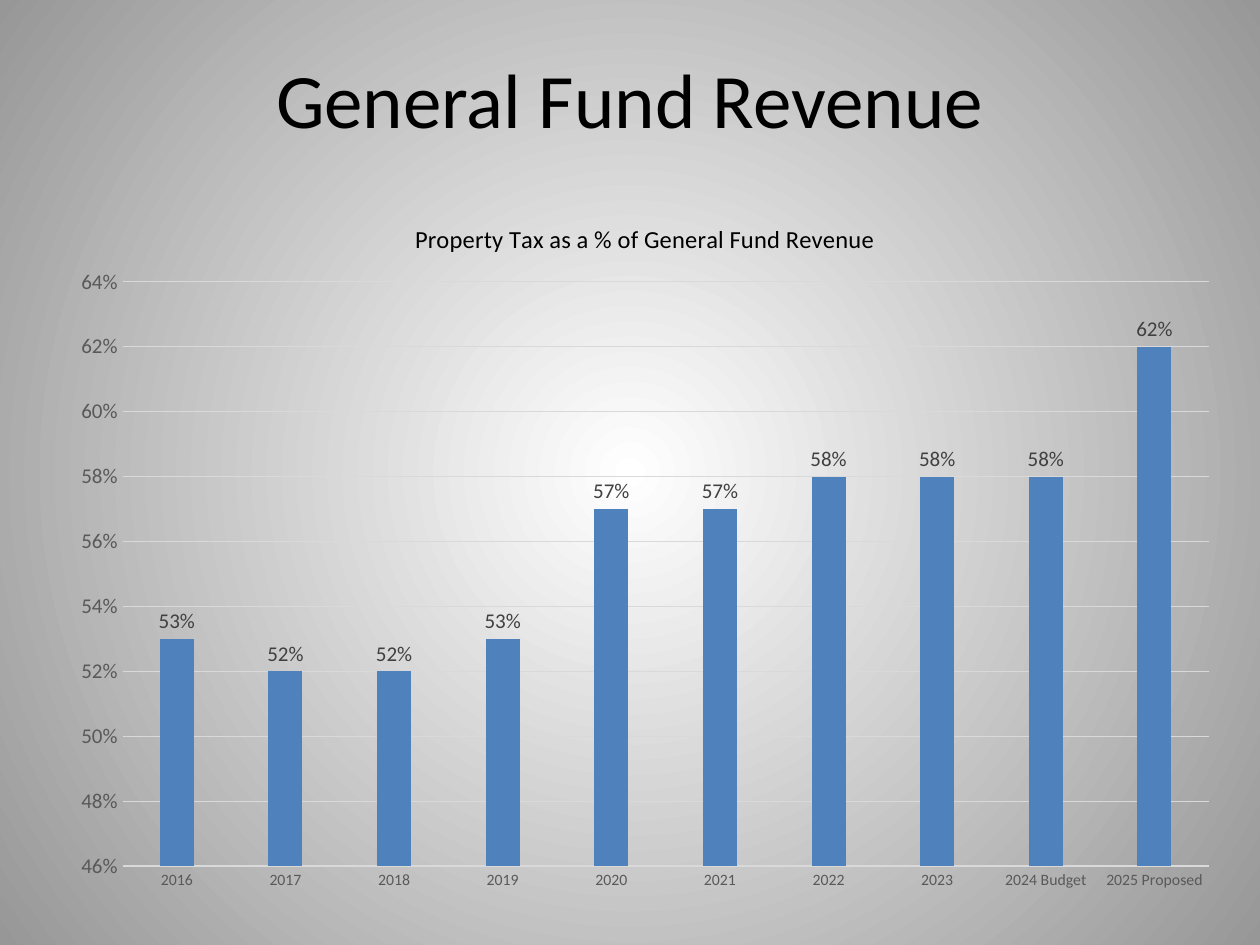
"""Build a slide with a column chart of property tax as a share of revenue."""
from lxml import etree
from pptx import Presentation
from pptx.chart.data import CategoryChartData
from pptx.dml.color import RGBColor
from pptx.enum import chart as ce, text as te
from pptx.oxml import ns, parse_xml
from pptx.util import Inches, Pt

HEAD = "General Fund Revenue"
TITLE = "Property Tax as a % of General Fund Revenue"
SHARES = [
    ("2016", 0.53), ("2017", 0.52), ("2018", 0.52), ("2019", 0.53),
    ("2020", 0.57), ("2021", 0.57), ("2022", 0.58), ("2023", 0.58),
    ("2024 Budget", 0.58), ("2025 Proposed", 0.62),
]
FACE = "Calibri"
BLACK = RGBColor(0x00, 0x00, 0x00)
DARK = RGBColor(0x40, 0x40, 0x40)
GRAY = RGBColor(0x59, 0x59, 0x59)
PALE = RGBColor(0xD9, 0xD9, 0xD9)
BLUE = RGBColor(0x4F, 0x81, 0xBD)
WHITE = RGBColor(0xFF, 0xFF, 0xFF)
EDGE = RGBColor(0x97, 0x97, 0x97)


def style(font, size, color):
    font.name, font.size, font.bold = FACE, Pt(size), False
    font.color.rgb = color


def write(frame, words, size=12, color=BLACK, align=te.PP_ALIGN.CENTER):
    para = frame.paragraphs[0]
    para.alignment = align
    run = para.add_run()
    run.text = words
    style(run.font, size, color)


def rule(line, color=PALE):
    line.color.rgb = color
    line.width = Pt(0.75)


def glow(slide):
    slide.background.fill.gradient()
    old = slide.element.find(".//" + ns.qn("a:gradFill"))
    stops = "".join(
        f'<a:gs pos="{pos}"><a:srgbClr val="{color}"/></a:gs>'
        for pos, color in ((0, WHITE), (100000, EDGE)))
    new = parse_xml(
        f'<a:gradFill {ns.nsdecls("a")} rotWithShape="1"><a:gsLst>{stops}</a:gsLst>'
        '<a:path path="circle"><a:fillToRect l="50000" t="50000" r="50000" b="50000"/>'
        '</a:path></a:gradFill>')
    old.getparent().replace(old, new)


def place(node, index, inner=False, **parts):
    for old in node.findall(ns.qn("c:layout")):
        node.remove(old)
    box = etree.Element(ns.qn("c:layout"))
    man = etree.SubElement(box, ns.qn("c:manualLayout"))
    tags = {"layoutTarget": "inner"} if inner else {}
    tags.update(xMode="edge", yMode="edge", **parts)
    for tag, val in tags.items():
        etree.SubElement(man, ns.qn("c:" + tag)).set("val", str(val))
    node.insert(index, box)


def plot(slide):
    data = CategoryChartData(number_format="0%")
    data.categories = [year for year, _ in SHARES]
    data.add_series("Series 1", [share for _, share in SHARES])
    area = [Inches(n) for n in (0.46, 1.5, 9.33, 5.67)]
    chart = slide.shapes.add_chart(ce.XL_CHART_TYPE.COLUMN_CLUSTERED, *area, data).chart
    style(chart.font, 10, BLACK)
    chart.has_legend = False
    write(chart.chart_title.text_frame, TITLE, size=14)
    chart.chart_title.include_in_layout = False

    bars = chart.plots[0]
    bars.gap_width, bars.overlap, bars.vary_by_categories = 219, -27, False
    fill = bars.series[0].format.fill
    fill.solid()
    fill.fore_color.rgb = BLUE
    tags = bars.series[0].data_labels
    tags.show_value = True
    tags.number_format, tags.number_format_is_linked = "0%", False
    tags.position = ce.XL_LABEL_POSITION.OUTSIDE_END
    style(tags.font, 12, DARK)

    cats, vals = chart.category_axis, chart.value_axis
    for axis, size in ((cats, 9), (vals, 12)):
        axis.major_tick_mark = axis.minor_tick_mark = ce.XL_TICK_MARK.NONE
        style(axis.tick_labels.font, size, GRAY)
    rule(cats.format.line)
    vals.format.line.fill.background()
    vals.has_major_gridlines = True
    rule(vals.major_gridlines.format.line)
    vals.minimum_scale, vals.maximum_scale, vals.major_unit = 0.46, 0.64, 0.02
    vals.tick_labels.number_format = "0%"
    vals.tick_labels.number_format_is_linked = False

    root = chart.element
    place(root.find(".//" + ns.qn("c:title")), 1, x=0.3, y=0.04)
    place(root.find(".//" + ns.qn("c:plotArea")), 0, inner=True,
          x=0.055, y=0.13, w=0.924, h=0.818)


def main():
    deck = Presentation()
    deck.slide_width, deck.slide_height = Inches(10), Inches(7.5)
    slide = deck.slides.add_slide(deck.slide_layouts[6])
    glow(slide)
    area = [Inches(n) for n in (0.5, 0.3, 9, 0.95)]
    frame = slide.shapes.add_textbox(*area).text_frame
    frame.word_wrap = True
    frame.vertical_anchor = te.MSO_ANCHOR.MIDDLE
    write(frame, HEAD, size=44)
    plot(slide)
    deck.save("out.pptx")


if __name__ == "__main__":
    main()
